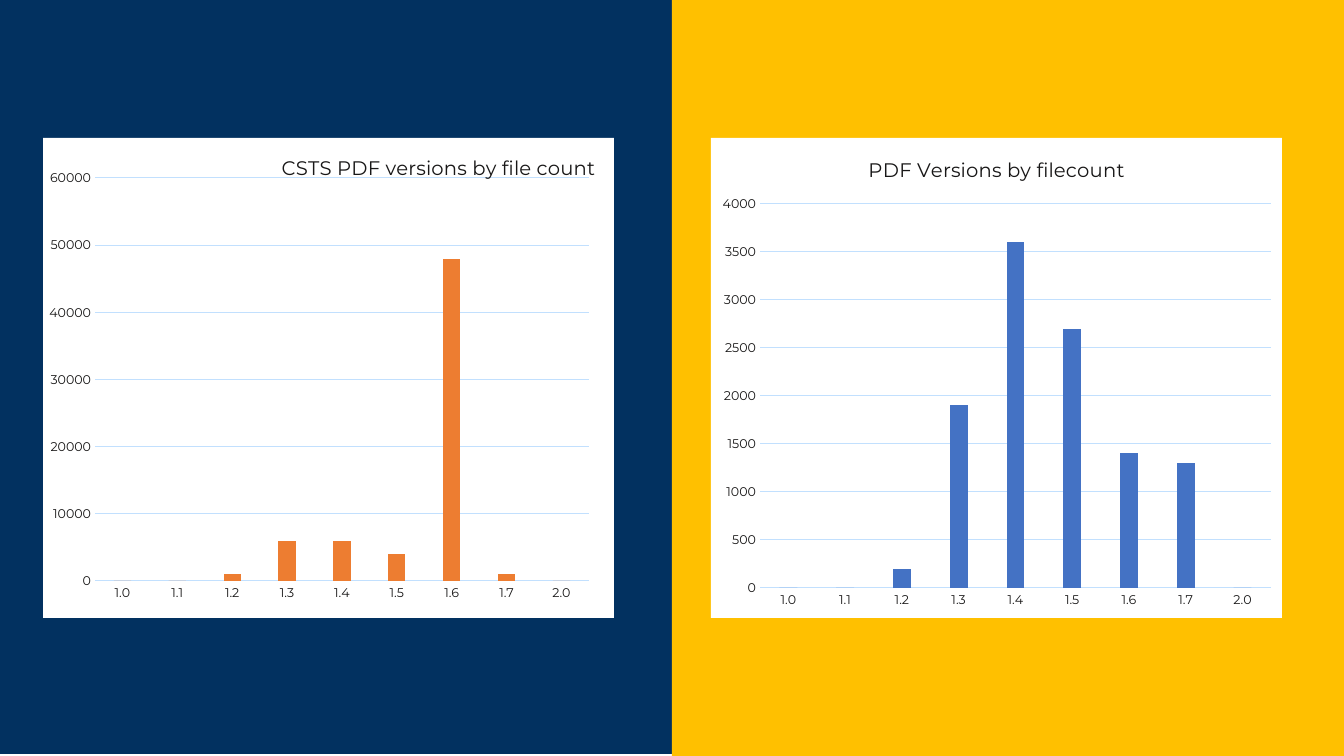
from dataclasses import dataclass

from lxml.etree import SubElement
from pptx import Presentation
from pptx.chart.data import CategoryChartData
from pptx.dml.color import RGBColor
from pptx.enum.chart import XL_CHART_TYPE, XL_TICK_MARK
from pptx.enum.shapes import MSO_SHAPE
from pptx.oxml import parse_xml
from pptx.oxml.ns import nsdecls, qn
from pptx.util import Pt

EMU_PER_PX = 12192000 / 1344
SLIDE_W, SLIDE_H = 1344, 756
CHART_TOP, CHART_W, CHART_H = 138, 571, 480
VERSIONS = ["1.0", "1.1", "1.2", "1.3", "1.4", "1.5", "1.6", "1.7", "2.0"]


@dataclass(frozen=True)
class Theme:
    font: str = "Montserrat"
    navy: str = "023160"
    gold: str = "FFC000"
    card: str = "FFFFFF"
    text: str = "181717"
    grid: str = "C2E0FE"
    orange: str = "ED7D31"
    blue: str = "4472C4"
    title_size: int = 14
    body_size: int = 10
    axis_size: int = 9
    line_width: float = 0.75


THEME = Theme()


def px(n):
    return round(n * EMU_PER_PX)


def rgb(value):
    return RGBColor.from_string(value)


def style_font(font, size, color):
    font.name = THEME.font
    font.size = Pt(size)
    font.bold = False
    font.color.rgb = rgb(color)


def style_line(line):
    line.color.rgb = rgb(THEME.grid)
    line.width = Pt(THEME.line_width)


def add_panel(s, left, top, color):
    """Fill one half of the slide with a plain colour."""
    sp = s.shapes.add_shape(MSO_SHAPE.RECTANGLE, px(left), px(top),
                            px(SLIDE_W // 2), px(SLIDE_H))
    sp.shadow.inherit = False
    sp.fill.solid()
    sp.fill.fore_color.rgb = rgb(color)
    sp.line.fill.background()


def make_layout(x, y, w=None, h=None):
    """Manual layout from px inside the chart; a size means a plot area."""
    layout = parse_xml(f"<c:layout {nsdecls('c')}><c:manualLayout/></c:layout>")
    settings = {"xMode": "edge", "yMode": "edge", "x": x / CHART_W, "y": y / CHART_H}
    if w is not None:
        settings = {"layoutTarget": "inner", **settings,
                    "w": w / CHART_W, "h": h / CHART_H}
    for tag, value in settings.items():
        SubElement(layout[0], qn(f"c:{tag}")).set("val", str(value))
    return layout


def drop_layout(element):
    for old in element.findall(qn("c:layout")):
        element.remove(old)


def fill_chart_area(chart):
    chart.element.find(qn("c:chart")).addnext(parse_xml(
        f"<c:spPr {nsdecls('c', 'a')}><a:solidFill><a:srgbClr val=\"{THEME.card}\"/>"
        "</a:solidFill><a:ln><a:noFill/></a:ln></c:spPr>"))


def set_title(chart, text, position):
    title = chart.chart_title
    p = title.text_frame.paragraphs[0]
    p.text = text
    style_font(p.runs[0].font, THEME.title_size, THEME.text)
    drop_layout(title.element)
    title.element.find(qn("c:tx")).addnext(make_layout(*position))


def style_axes(chart, top, step):
    for axis in (chart.category_axis, chart.value_axis):
        axis.major_tick_mark = axis.minor_tick_mark = XL_TICK_MARK.NONE
        style_font(axis.tick_labels.font, THEME.axis_size, THEME.text)
    style_line(chart.category_axis.format.line)
    axis = chart.value_axis
    axis.minimum_scale, axis.maximum_scale, axis.major_unit = 0, top, step
    axis.format.line.fill.background()
    style_line(axis.major_gridlines.format.line)


def add_version_chart(s, left, title, title_at, plot_at, values, color, top, step):
    data = CategoryChartData()
    data.categories = VERSIONS
    data.add_series("Series 1", values)
    chart = s.shapes.add_chart(XL_CHART_TYPE.COLUMN_CLUSTERED, px(left), px(CHART_TOP),
                               px(CHART_W), px(CHART_H), data).chart
    style_font(chart.font, THEME.body_size, THEME.navy)
    chart.has_legend = False
    fill_chart_area(chart)
    set_title(chart, title, title_at)
    style_axes(chart, top, step)

    plot = chart.plots[0]
    plot.gap_width, plot.overlap = 219, -27
    plot.vary_by_categories = False
    fill = plot.series[0].format.fill
    fill.solid()
    fill.fore_color.rgb = rgb(color)

    plot_area = chart.element.find(f"{qn('c:chart')}/{qn('c:plotArea')}")
    drop_layout(plot_area)
    plot_area.insert(0, make_layout(*plot_at))


def main():
    prs = Presentation()
    prs.slide_width, prs.slide_height = px(SLIDE_W), px(SLIDE_H)
    s = prs.slides.add_slide(prs.slide_layouts[6])
    add_panel(s, 0, -2, THEME.navy)
    add_panel(s, SLIDE_W // 2, 0, THEME.gold)
    add_version_chart(s, 711, "PDF Versions by filecount", (154, 15),
                      (49, 66, 511, 384),
                      [0, 0, 200, 1900, 3600, 2700, 1400, 1300, 0],
                      THEME.blue, 4000, 500)
    add_version_chart(s, 43, "CSTS PDF versions by file count", (235, 13),
                      (52, 40, 494, 403),
                      [0, 0, 1000, 6000, 6000, 4000, 48000, 1000, 0],
                      THEME.orange, 60000, 10000)
    prs.save("out.pptx")


if __name__ == "__main__":
    main()
